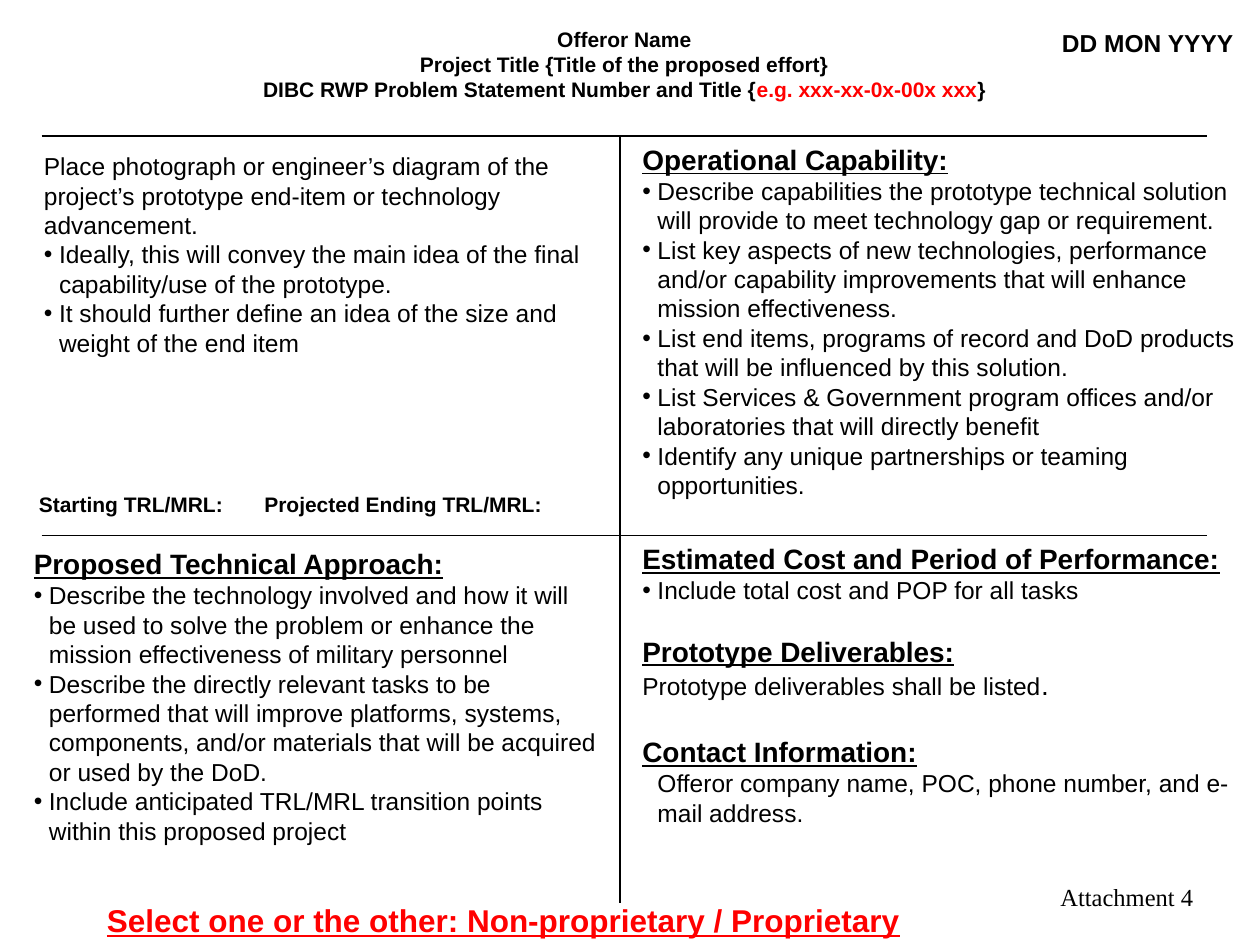
from dataclasses import dataclass

from lxml import etree
from pptx import Presentation
from pptx.dml.color import RGBColor
from pptx.enum import shapes, text
from pptx.oxml.ns import qn
from pptx.slide import Slide
from pptx.util import Emu, Pt

PX = 9144  # 100 px to the inch
BLACK = RGBColor(0, 0, 0)
RED = RGBColor(255, 0, 0)
WHITE = RGBColor(255, 255, 255)
HANG = 12
LEFT, MID, RIGHT = 33, 492, 958
TOP, HALF, BASE = 108, 425, 717


def px(n: int) -> Emu:
    return Emu(n * PX)


@dataclass
class Run:
    text: str
    size: float | None = None
    color: RGBColor | None = None


@dataclass
class Para:
    runs: list[Run]
    size: float = 14
    bold: bool = False
    line: bool = False
    color: RGBColor = BLACK
    font: str = "Arial"
    align: text.PP_ALIGN = text.PP_ALIGN.LEFT
    before: float = 0
    bullet: bool = False
    indent: int = 0
    tab: int = 0


@dataclass
class Box:
    left: int
    top: int
    width: int
    height: int
    paras: list[Para]
    inset: tuple[int, int] = (10, 5)


def para(*parts: str | Run, **form) -> Para:
    runs = [Run(p) if isinstance(p, str) else p for p in parts]
    return Para(runs, **form)


def head(words: str, before: float = 0) -> Para:
    return para(words, size=16, bold=True, line=True, before=before)


def items(*lines: str) -> list[Para]:
    return [para(line, bullet=True, indent=HANG) for line in lines]


def fill(p, spec_: Para) -> None:
    """Put the words and format of one paragraph in place."""
    props = p._p.get_or_add_pPr()
    if spec_.indent:
        props.set("marL", str(px(spec_.indent)))
        props.set("indent", str(px(-HANG if spec_.bullet else 0)))
    if spec_.bullet:
        etree.SubElement(props, qn("a:buFont"), typeface="Arial")
        etree.SubElement(props, qn("a:buChar"), char="•")
    if spec_.tab:
        tabs = etree.SubElement(props, qn("a:tabLst"))
        etree.SubElement(tabs, qn("a:tab"), pos=str(px(spec_.tab)), algn="l")
    p.alignment = spec_.align
    if spec_.before:
        p.space_before = Pt(spec_.before)
    for part in spec_.runs:
        run = p.add_run()
        run.text = part.text
        font = run.font
        font.name = spec_.font
        font.size = Pt(part.size or spec_.size)
        font.bold = spec_.bold
        font.underline = spec_.line
        font.color.rgb = part.color or spec_.color


def draw(slide: Slide, box: Box) -> None:
    shape = slide.shapes.add_textbox(
        px(box.left), px(box.top), px(box.width), px(box.height))
    frame = shape.text_frame
    frame.word_wrap = True
    frame.margin_left = frame.margin_right = px(box.inset[0])
    frame.margin_top = frame.margin_bottom = px(box.inset[1])
    for i, item in enumerate(box.paras):
        fill(frame.add_paragraph() if i else frame.paragraphs[0], item)


def rule(slide: Slide, x1: int, y1: int, x2: int, y2: int) -> None:
    line = slide.shapes.add_connector(
        shapes.MSO_CONNECTOR.STRAIGHT, px(x1), px(y1), px(x2), px(y2))
    line.line.color.rgb = BLACK
    line.line.width = Pt(0.75)
    etree.SubElement(line._element.spPr, qn("a:effectLst"))


TITLE = dict(size=12, bold=True, align=text.PP_ALIGN.CENTER)

BOXES = [
    Box(133, 17, 725, 70, [
        para("Offeror Name", **TITLE),
        para("Project Title {Title of the proposed effort}", **TITLE),
        para("DIBC RWP Problem Statement Number and Title {",
             Run("e.g. xxx-xx-0x-00x xxx", color=RED), "}", **TITLE),
    ], inset=(9, 4)),
    Box(25, 115, 458, 175, [
        para("Place photograph or engineer’s diagram of the project’s "
             "prototype end-item or technology advancement."),
        *items(
            "Ideally, this will convey the main idea of the final "
            "capability/use of the prototype.",
            "It should further define an idea of the size and weight of "
            "the end item"),
    ]),
    Box(500, TOP, 500, 296, [
        head("Operational Capability:"),
        *items(
            "Describe capabilities the prototype technical solution will "
            "provide to meet technology gap or requirement.",
            "List key aspects of new technologies, performance and/or "
            "capability improvements that will enhance mission "
            "effectiveness.",
            "List end items, programs of record and DoD products that will "
            "be influenced by this solution.",
            "List Services & Government program offices and/or "
            "laboratories that will directly benefit",
            "Identify any unique partnerships or teaming opportunities."),
    ]),
    Box(833, 17, 158, 34, [para("DD MON YYYY", bold=True)]),
    Box(75, 710, 692, 71, [
        para("Select one or the other: Non-proprietary / Proprietary",
             size=18, bold=True, line=True, color=RED),
    ]),
    Box(17, 429, 467, 249, [
        head("Proposed Technical Approach:"),
        *items(
            "Describe the technology involved and how it will be used to "
            "solve the problem or enhance the mission effectiveness of "
            "military personnel",
            "Describe the directly relevant tasks to be performed that will "
            "improve platforms, systems, components, and/or materials that "
            "will be acquired or used by the DoD.",
            "Include anticipated TRL/MRL transition points within this "
            "proposed project"),
    ]),
    Box(500, HALF, 500, 239, [
        head("Estimated Cost and Period of Performance:"),
        *items("Include total cost and POP for all tasks"),
        head("Prototype Deliverables:", before=16.8),
        para("Prototype deliverables shall be listed", Run(".", size=16)),
        head("Contact Information:", before=19.2),
        para("Offeror company name, POC, phone number, and e-mail address.",
             indent=HANG),
    ]),
    Box(21, 385, 467, 30, [
        para("Starting TRL/MRL:\tProjected Ending TRL/MRL:",
             size=12, bold=True, tab=179),
    ]),
    Box(640, 695, 317, 50, [
        para("Attachment 4", font="Times New Roman",
             align=text.PP_ALIGN.RIGHT),
    ]),
]


def main() -> None:
    deck = Presentation()
    deck.slide_width, deck.slide_height = px(1000), px(750)
    slide = deck.slides.add_slide(deck.slide_layouts[6])
    slide.background.fill.solid()
    slide.background.fill.fore_color.rgb = WHITE
    for y in (TOP, HALF):
        rule(slide, LEFT, y, RIGHT, y)
    rule(slide, MID, TOP, MID, BASE)
    for box in BOXES:
        draw(slide, box)
    deck.save("out.pptx")


if __name__ == "__main__":
    main()
